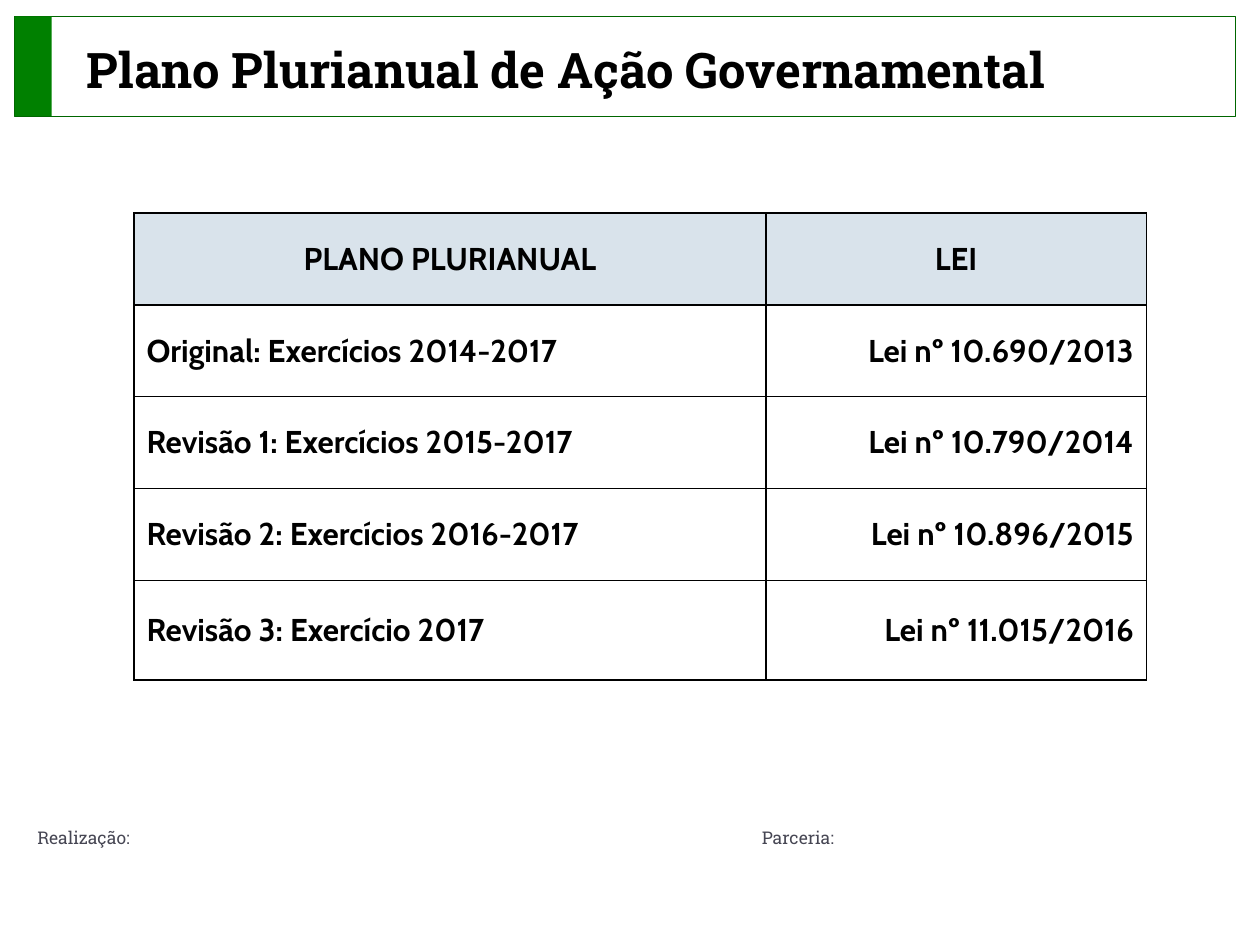
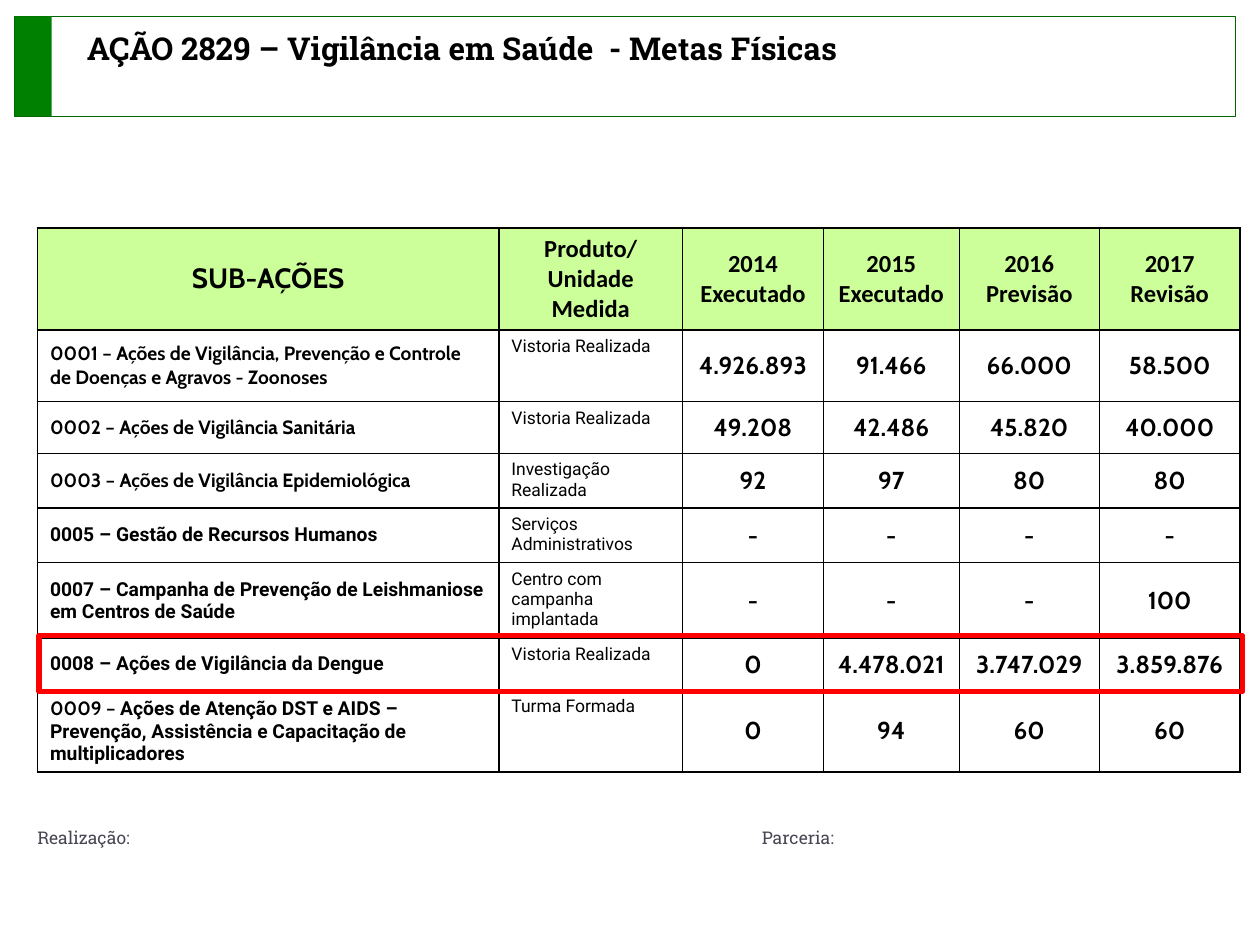
from lxml import etree
from pptx import Presentation
from pptx.dml.color import RGBColor
from pptx.enum.shapes import MSO_SHAPE
from pptx.enum.text import MSO_ANCHOR, PP_ALIGN
from pptx.oxml.ns import qn
from pptx.util import Pt

RECTANGLE = MSO_SHAPE.RECTANGLE
TOP, MIDDLE = MSO_ANCHOR.TOP, MSO_ANCHOR.MIDDLE
LEFT, CENTER, RIGHT, JUSTIFY = PP_ALIGN.LEFT, PP_ALIGN.CENTER, PP_ALIGN.RIGHT, PP_ALIGN.JUSTIFY

BLACK = RGBColor(0x00, 0x00, 0x00)
WHITE = RGBColor(0xFF, 0xFF, 0xFF)
GREEN = RGBColor(0x00, 0x80, 0x00)
DARK_GREEN = RGBColor(0x00, 0x66, 0x00)
GRAY = RGBColor(0x46, 0x46, 0x53)
PALE_BLUE = RGBColor(0xD9, 0xE3, 0xEB)
PALE_GREEN = RGBColor(0xCC, 0xFF, 0x99)
RED = RGBColor(0xFF, 0x00, 0x00)

CABIN, CALIBRI, ROBOTO, SLAB = "Cabin", "Calibri", "Roboto", "Roboto Slab"

PLAN_TITLE = "Plano Plurianual de Ação Governamental"
PLAN_HEADER = ["PLANO PLURIANUAL", "LEI"]
PLAN_ROWS = [
    ("Original: Exercícios 2014-2017", "Lei nº 10.690/2013"),
    ("Revisão 1: Exercícios 2015-2017", "Lei nº 10.790/2014"),
    ("Revisão 2: Exercícios 2016-2017", "Lei nº 10.896/2015"),
    ("Revisão 3: Exercício 2017", "Lei nº 11.015/2016"),
]
PLAN_WIDTHS = [361, 217.5]
PLAN_HEIGHTS = [52.5] * 4 + [57]

GOALS_TITLE = "AÇÃO 2829 – Vigilância em Saúde  - Metas Físicas"
GOALS_HEADER = ["SUB-AÇÕES", "Produto/\nUnidade Medida", "2014\nExecutado",
                "2015\nExecutado", "2016\nPrevisão", "2017\nRevisão"]
GOALS_ROWS = [
    ([("0001 – Ações de Vigilância, Prevenção e Controle de Doenças e Agravos - Zoonoses", CABIN)],
     "Vistoria Realizada", "4.926.893", "91.466", "66.000", "58.500"),
    ([("0002 – Ações de Vigilância Sanitária", CABIN)],
     "Vistoria Realizada", "49.208", "42.486", "45.820", "40.000"),
    ([("0003 – Ações de Vigilância Epidemiológica", CABIN)],
     "Investigação Realizada", "92", "97", "80", "80"),
    ([("0005 – Gestão de Recursos Humanos", ROBOTO)],
     "Serviços Administrativos", "-", "-", "-", "-"),
    ([("0007 – Campanha de Prevenção de Leishmaniose em Centros de Saúde", ROBOTO)],
     "Centro com campanha implantada", "-", "-", "-", "100"),
    ([("0008 – Ações de Vigilância da Dengue", ROBOTO)],
     "Vistoria Realizada", "0", "4.478.021", "3.747.029", "3.859.876"),
    ([("0009 – ", CABIN),
      ("Ações de Atenção DST e AIDS – Prevenção, Assistência e Capacitação de multiplicadores", ROBOTO)],
     "Turma Formada", "0", "94", "60", "60"),
]
GOALS_WIDTHS = [263.7, 105, 80.4, 77.7, 80, 80.5]
GOALS_HEIGHTS = [58.3, 41.1, 29.5, 30.5, 30.5, 42.2, 29.5, 46.5]


def style(paragraph, name, size, color=BLACK, bold=True, align=LEFT):
    paragraph.alignment = align
    font = paragraph.font
    font.name, font.size, font.bold = name, Pt(size), bold
    font.color.rgb = color


def add_rectangle(slide, box, fill=None, line=None, line_width=0.5):
    shape = slide.shapes.add_shape(RECTANGLE, *map(Pt, box))
    shape.shadow.inherit = False
    if fill is None:
        shape.fill.background()
    else:
        shape.fill.solid()
        shape.fill.fore_color.rgb = fill
    if line is None:
        shape.line.fill.background()
    else:
        shape.line.color.rgb = line
        shape.line.width = Pt(line_width)


def add_text(slide, box, text):
    frame = slide.shapes.add_textbox(*map(Pt, box)).text_frame
    frame.word_wrap = True
    frame.text = text
    return frame.paragraphs[0]


def add_slide(presentation, title, title_box, title_size, title_align):
    slide = presentation.slides.add_slide(presentation.slide_layouts[6])
    add_rectangle(slide, (8.5, 9.3, 697.6, 57), line=DARK_GREEN)
    add_rectangle(slide, (8.5, 9.3, 21, 57), fill=GREEN)
    footer = add_text(slide, (14.2, 468.8, 687.6, 22.3), "Realização:\tParceria:")
    tabs = etree.SubElement(footer._p.get_or_add_pPr(), qn("a:tabLst"))
    etree.SubElement(tabs, qn("a:tab"), pos=str(Pt(414)), algn="l")
    style(footer, SLAB, 10, GRAY, bold=False)
    style(add_text(slide, title_box, title), SLAB, title_size, align=title_align)
    return slide


def border_cell(cell):
    properties = cell._tc.get_or_add_tcPr()
    for position, side in enumerate(("lnL", "lnR", "lnT", "lnB")):
        line = etree.Element(qn("a:" + side), w=str(Pt(1)))
        fill = etree.SubElement(line, qn("a:solidFill"))
        etree.SubElement(fill, qn("a:srgbClr"), val=str(BLACK))
        properties.insert(position, line)


def fill_cell(cell, content, font, size, align, fill=None, bold=True, anchor=MIDDLE):
    if isinstance(content, str):
        cell.text = content
    else:
        for text, run_font in content:
            run = cell.text_frame.paragraphs[0].add_run()
            run.text = text
            run.font.name = run_font
    for paragraph in cell.text_frame.paragraphs:
        style(paragraph, font, size, bold=bold, align=align)
    cell.vertical_anchor = anchor
    if fill is None:
        cell.fill.background()
    else:
        cell.fill.solid()
        cell.fill.fore_color.rgb = fill
    border_cell(cell)


def add_table(slide, left, top, widths, heights):
    frame = slide.shapes.add_table(len(heights), len(widths), Pt(left), Pt(top),
                                   Pt(sum(widths)), Pt(sum(heights)))
    table = frame.table
    table.horz_banding = False
    for column, width in zip(table.columns, widths):
        column.width = Pt(width)
    for row, height in zip(table.rows, heights):
        row.height = Pt(height)
    return table


def build_plan(presentation):
    slide = add_slide(presentation, PLAN_TITLE, (42.5, 19.3, 613.4, 39.7), 28, LEFT)
    table = add_table(slide, 76.6, 121.7, PLAN_WIDTHS, PLAN_HEIGHTS)
    for column, label in enumerate(PLAN_HEADER):
        fill_cell(table.cell(0, column), label, CABIN, 18, CENTER, PALE_BLUE)
    for row, values in enumerate(PLAN_ROWS, 1):
        for column, (value, align) in enumerate(zip(values, (LEFT, RIGHT))):
            fill_cell(table.cell(row, column), value, CABIN, 18, align, WHITE)


def build_goals(presentation):
    slide = add_slide(presentation, GOALS_TITLE, (42.5, 13, 663, 46.8), 18, JUSTIFY)
    table = add_table(slide, 21.4, 130.2, GOALS_WIDTHS, GOALS_HEIGHTS)
    for column, label in enumerate(GOALS_HEADER):
        cell = table.cell(0, column)
        font, size = (CABIN, 16) if column == 0 else (CALIBRI, 14)
        fill_cell(cell, label, font, size, CENTER, PALE_GREEN)
        if column > 1:
            cell.margin_left = cell.margin_right = cell.margin_top = Pt(0.7)
            cell.margin_bottom = Pt(0)
    for row, (subaction, product, *goals) in enumerate(GOALS_ROWS, 1):
        fill_cell(table.cell(row, 0), subaction, CABIN, 11, LEFT)
        fill_cell(table.cell(row, 1), product, ROBOTO, 10, LEFT, bold=False, anchor=TOP)
        for column, goal in enumerate(goals, 2):
            fill_cell(table.cell(row, column), goal, CABIN, 14, CENTER)
    add_rectangle(slide, (22.3, 363.3, 687.8, 31.9), line=RED, line_width=3)


def main():
    presentation = Presentation()
    presentation.slide_width, presentation.slide_height = Pt(720), Pt(540)
    build_plan(presentation)
    build_goals(presentation)
    presentation.save("out.pptx")


if __name__ == "__main__":
    main()
